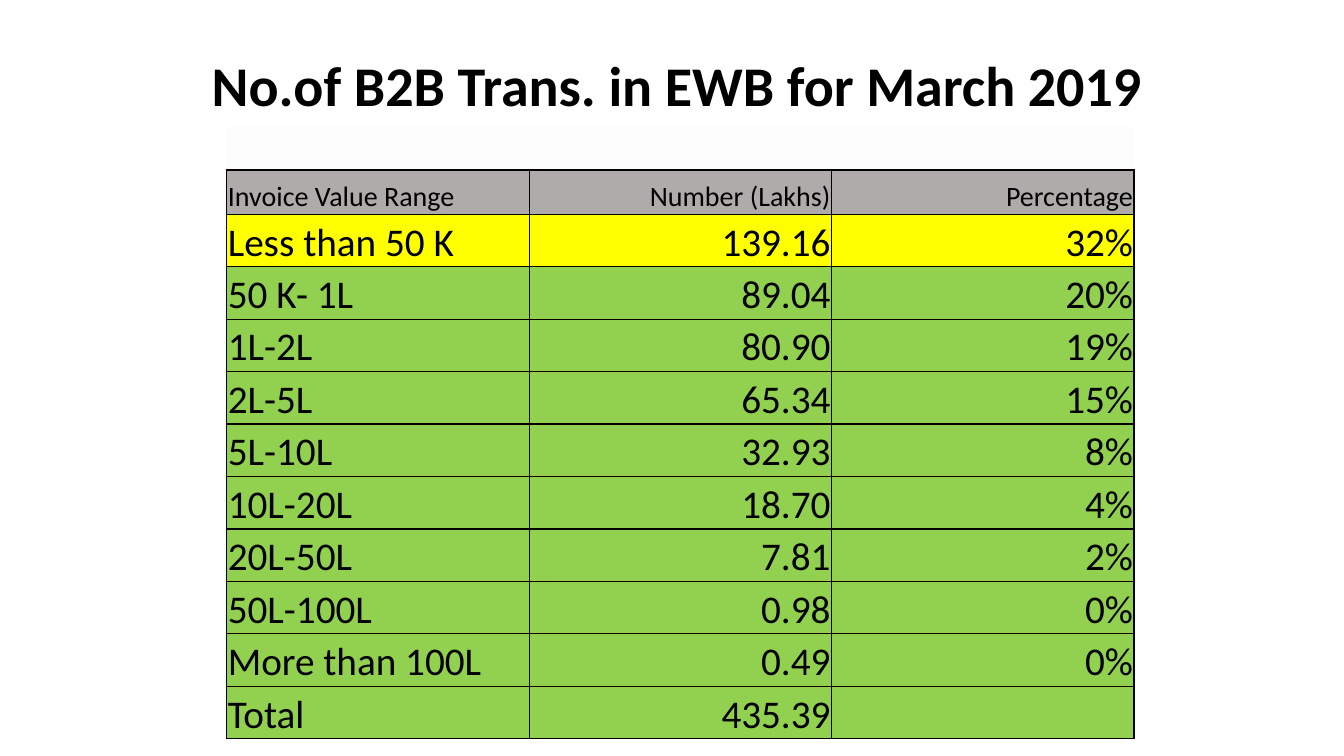
from lxml.etree import SubElement
from pptx import Presentation
from pptx.dml.color import RGBColor
from pptx.enum.text import MSO_ANCHOR, MSO_AUTO_SIZE, PP_ALIGN
from pptx.oxml.ns import qn
from pptx.util import Emu, Pt

BLACK = RGBColor(0x00, 0x00, 0x00)
OFF_WHITE = RGBColor(0xFD, 0xFD, 0xFD)
GREY = RGBColor(0xAF, 0xAB, 0xAB)
YELLOW = RGBColor(0xFF, 0xFF, 0x00)
GREEN = RGBColor(0x92, 0xD0, 0x50)

HEADER = ("Invoice Value Range", "Number (Lakhs)", "Percentage")
RANGES = [
    ("Less than 50 K", "139.16", "32%"),
    ("50 K- 1L", "89.04", "20%"),
    ("1L-2L", "80.90", "19%"),
    ("2L-5L", "65.34", "15%"),
    ("5L-10L", "32.93", "8%"),
    ("10L-20L", "18.70", "4%"),
    ("20L-50L", "7.81", "2%"),
    ("50L-100L", "0.98", "0%"),
    ("More than 100L", "0.49", "0%"),
    ("Total", "435.39", ""),
]


def px(n):
    """Turn px, 96 to the inch, into EMU."""
    return Emu(n * 9525)


def write(tf, text, size=28, bold=False, align=PP_ALIGN.LEFT, font="Calibri", color=BLACK):
    p = tf.paragraphs[0]
    p.alignment = align
    r = p.add_run()
    r.text = text
    r.font.name, r.font.size, r.font.bold = font, Pt(size), bold
    r.font.color.rgb = color


def set_borders(cell, sides):
    """Draw the named sides (of L, R, T, B) in black and clear the others."""
    tcPr = cell._tc.get_or_add_tcPr()
    for side in "LRTB":
        ln = SubElement(tcPr, qn(f"a:ln{side}"), w=str(Pt(1)))
        if side in sides:
            fill = SubElement(ln, qn("a:solidFill"))
            SubElement(fill, qn("a:srgbClr"), val=str(BLACK))
        else:
            SubElement(ln, qn("a:noFill"))


class SlideBuilder:
    def __init__(self, prs):
        self.s = prs.slides.add_slide(prs.slide_layouts[5])

    def title(self, text, x, y, w, h):
        sp = self.s.shapes.title
        sp.left, sp.top, sp.width, sp.height = px(x), px(y), px(w), px(h)
        tf = sp.text_frame
        tf.word_wrap = True
        tf.auto_size = MSO_AUTO_SIZE.SHAPE_TO_FIT_TEXT
        tf.vertical_anchor = MSO_ANCHOR.TOP
        write(tf, text, size=40, bold=True)
        sp.element.getparent().append(sp.element)  # bring to front

    def table(self, x, y, col_width, row_heights):
        """Add an unstyled table with the columns of HEADER."""
        n_rows, n_cols = len(row_heights), len(HEADER)
        frame = self.s.shapes.add_table(n_rows, n_cols, px(x), px(y),
                                        px(col_width * n_cols), px(sum(row_heights)))
        tbl = frame.table
        tbl.first_row = tbl.horz_banding = False
        for col in tbl.columns:
            col.width = px(col_width)
        for row, height in zip(tbl.rows, row_heights):
            row.height = px(height)
        return tbl

    def row(self, tbl, index, texts, fill, size=28, sides="LRTB"):
        for c, text in enumerate(texts):
            cell = tbl.cell(index, c)
            set_borders(cell, sides)
            cell.fill.solid()
            cell.fill.fore_color.rgb = fill
            if text:
                cell.margin_left = cell.margin_right = cell.margin_top = px(1)
                cell.margin_bottom = 0
                cell.vertical_anchor = MSO_ANCHOR.BOTTOM
                write(cell.text_frame, text, size=size,
                      align=PP_ALIGN.RIGHT if c else PP_ALIGN.LEFT)


def main():
    prs = Presentation()
    prs.slide_width, prs.slide_height = px(1280), px(720)
    slide = SlideBuilder(prs)

    tbl = slide.table(216, 120, 288, [42] * 2 + [50] * len(RANGES))
    slide.row(tbl, 0, [""] * len(HEADER), OFF_WHITE, sides="B")
    tbl.cell(0, 0).merge(tbl.cell(0, len(HEADER) - 1))
    slide.row(tbl, 1, HEADER, GREY, size=20)
    for i, texts in enumerate(RANGES):
        slide.row(tbl, i + 2, texts, GREEN if i else YELLOW)

    slide.title("No.of B2B Trans. in EWB for March 2019", 192, 43, 912, 126)
    prs.save("out.pptx")


if __name__ == "__main__":
    main()
